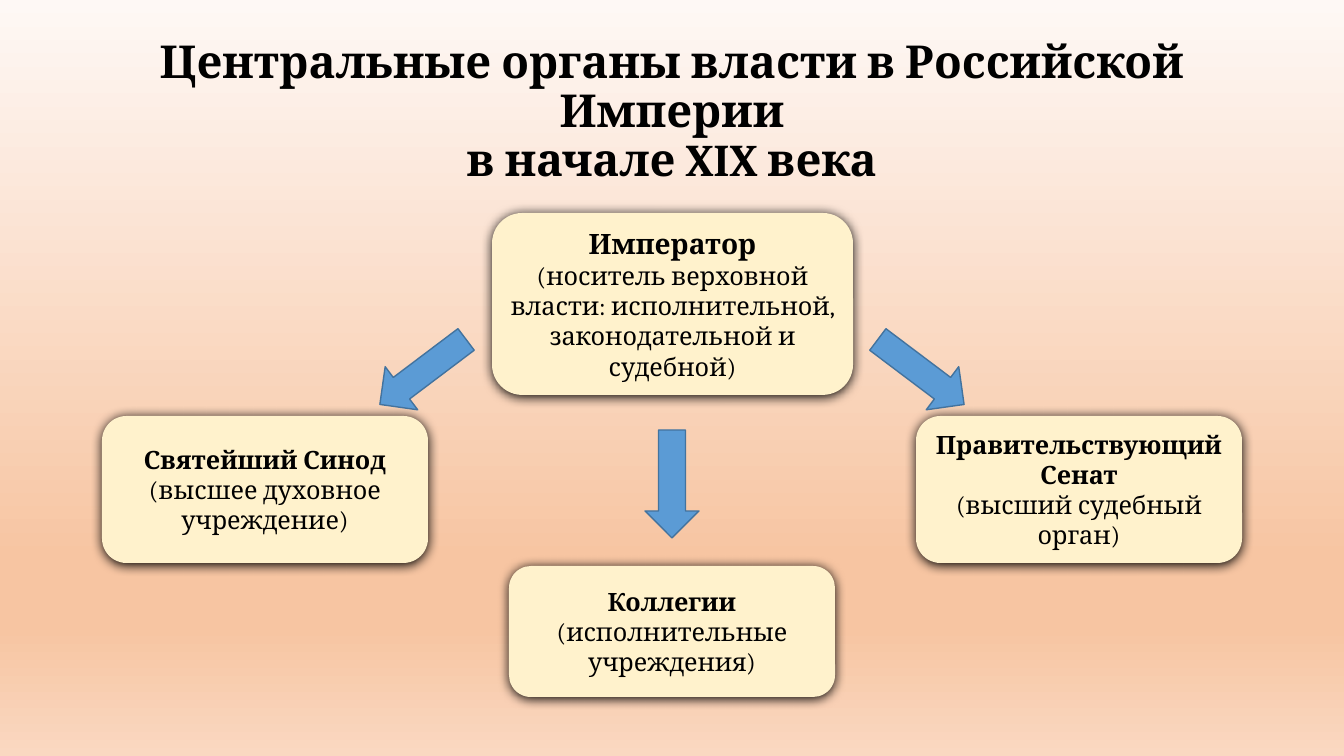
import lxml.etree
import pptx
import pptx.dml.color
import pptx.enum.shapes
import pptx.enum.text
import pptx.oxml.ns
import pptx.util

RGBColor = pptx.dml.color.RGBColor
Shapes = pptx.enum.shapes.MSO_SHAPE
qn = pptx.oxml.ns.qn

BLACK = RGBColor(0x00, 0x00, 0x00)
CREAM = RGBColor(0xFF, 0xF2, 0xCC)
BLUE = RGBColor(0x5B, 0x9B, 0xD5)
DARK_BLUE = RGBColor(0x43, 0x73, 0x9E)
PALE = RGBColor(0xFE, 0xF8, 0xF5)
PEACH = RGBColor(0xF7, 0xC5, 0xA2)
LIGHT_PEACH = RGBColor(0xFA, 0xD8, 0xC1)
BACKGROUND = [(0, PALE), (74, PEACH), (83, PEACH), (100, LIGHT_PEACH)]

WIDTH, HEIGHT = 1344, 756
CENTER = WIDTH // 2
BRANCH_WIDTH = 326
ARROW_LENGTH, ARROW_BREADTH = 108, 54


def px(length):
    return round(length * 914400 / 100.8)


def place(box):
    return [px(length) for length in box]


def add_color(parent, tag, color, **attributes):
    holder = lxml.etree.SubElement(parent, qn(tag), **attributes)
    lxml.etree.SubElement(holder, qn("a:srgbClr"), val=str(color))


def paint_background(page):
    fill = page.background.fill
    fill.gradient()
    fill.gradient_angle = 270
    stops = page.element.find(".//" + qn("a:gsLst"))
    for stop in list(stops):
        stops.remove(stop)
    for percent, color in BACKGROUND:
        add_color(stops, "a:gs", color, pos=str(percent * 1000))


def write(para, text, size=18, bold=False, spacing=1.0):
    para.alignment = pptx.enum.text.PP_ALIGN.CENTER
    para.line_spacing = spacing
    para.text = text
    for span in para.runs:
        span.font.name = "Cambria"
        span.font.size = pptx.util.Pt(size)
        span.font.bold = bold
        span.font.color.rgb = BLACK


def prepare_frame(shape):
    frame = shape.text_frame
    frame.word_wrap = True
    frame.vertical_anchor = pptx.enum.text.MSO_ANCHOR.MIDDLE
    return frame


def add_title(page, box, text):
    frame = prepare_frame(page.shapes.add_textbox(*place(box)))
    write(frame.paragraphs[0], text, size=32.4, bold=True, spacing=0.9)


def add_authority(page, box, name, role, name_size=18):
    shape = page.shapes.add_shape(Shapes.ROUNDED_RECTANGLE, *place(box))
    shape.fill.solid()
    shape.fill.fore_color.rgb = CREAM
    shape.line.fill.background()
    shape.shadow.inherit = False
    effects = shape.element.spPr.find(qn("a:effectLst"))
    add_color(effects, "a:outerShdw", BLACK, blurRad=str(pptx.util.Pt(8.5)),
              dist=str(pptx.util.Pt(1)), dir="5400000", algn="t", rotWithShape="0")
    frame = prepare_frame(shape)
    write(frame.paragraphs[0], name, size=name_size, bold=True)
    write(frame.add_paragraph(), role)


def add_arrow(page, kind, box, rotation=0):
    arrow = page.shapes.add_shape(kind, *place(box))
    arrow.rotation = rotation
    arrow.shadow.inherit = False
    arrow.fill.solid()
    arrow.fill.fore_color.rgb = BLUE
    arrow.line.color.rgb = DARK_BLUE
    arrow.line.width = pptx.util.Pt(1)


def add_hierarchy(page, box):
    left, top, width, height = box
    right = left + width
    middle = left + width // 2
    branch_top = top + 203
    add_authority(page, (middle - 180, top, 361, 182), "Император",
                  "(носитель верховной власти: исполнительной, законодательной и судебной)",
                  name_size=20)
    add_authority(page, (left, branch_top, BRANCH_WIDTH, 147),
                  "Святейший Синод", "(высшее духовное учреждение)")
    add_authority(page, (right - BRANCH_WIDTH, branch_top, BRANCH_WIDTH, 147),
                  "Правительствующий Сенат", "(высший судебный орган)")
    add_authority(page, (middle - BRANCH_WIDTH // 2, top + height - 131, BRANCH_WIDTH, 131),
                  "Коллегии", "(исполнительные учреждения)")
    side_top = top + 132
    add_arrow(page, Shapes.LEFT_ARROW,
              (left + 267, side_top, ARROW_LENGTH, ARROW_BREADTH), rotation=323)
    add_arrow(page, Shapes.RIGHT_ARROW,
              (right - 267 - ARROW_LENGTH, side_top, ARROW_LENGTH, ARROW_BREADTH), rotation=37)
    add_arrow(page, Shapes.DOWN_ARROW,
              (middle - ARROW_BREADTH // 2, top + 217, ARROW_BREADTH, ARROW_LENGTH))


def main():
    deck = pptx.Presentation()
    deck.slide_width, deck.slide_height = px(WIDTH), px(HEIGHT)
    page = deck.slides.add_slide(deck.slide_layouts[6])
    paint_background(page)
    add_title(page, (CENTER - 580, 40, 1160, 146),
              "Центральные органы власти в Российской Империи\vв начале XIX века")
    add_hierarchy(page, (CENTER - 570, 213, 1140, 484))
    deck.save("out.pptx")


if __name__ == "__main__":
    main()
